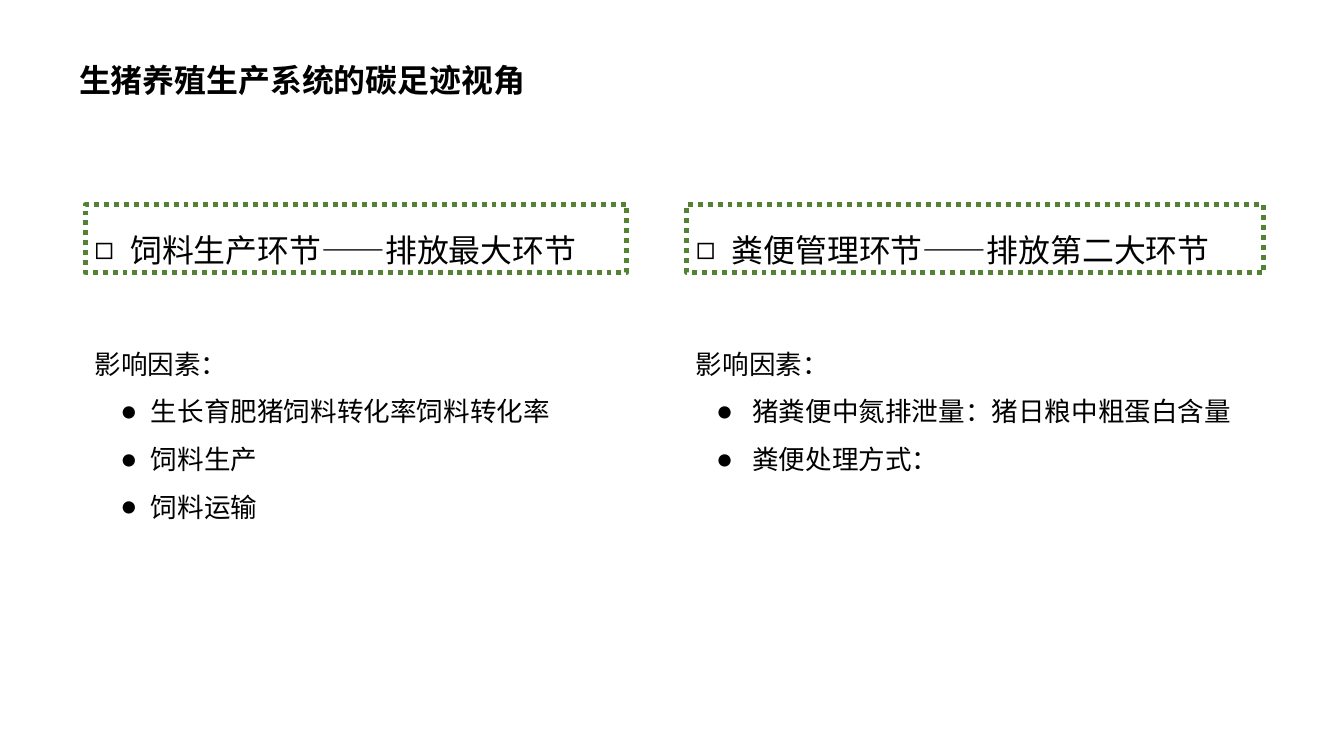
import dataclasses

import lxml.etree
import pptx
import pptx.dml.color
import pptx.enum.dml
import pptx.enum.lang
import pptx.enum.shapes
import pptx.enum.text
import pptx.oxml.ns
import pptx.util

Cm = pptx.util.Cm
Pt = pptx.util.Pt


@dataclasses.dataclass(frozen=True)
class Theme:
    """Holds the colours, fonts and type sizes of the slide."""

    ink: str = "000000"
    green: str = "548235"
    font: str = "Noto Sans CJK SC"
    latin: str = "Calibri"
    head: int = 24
    body: int = 20
    tight: float = 1.2
    loose: float = 1.8


THEME = Theme()
TITLE = "生猪养殖生产系统的碳足迹视角"
LABEL = "影响因素："
FEED = ["生长育肥猪饲料转化率饲料转化率", "饲料生产", "饲料运输"]
DUNG = ["猪粪便中氮排泄量：猪日粮中粗蛋白含量", "粪便处理方式："]


def tint(code):
    """Turn a hex code into a colour."""
    return pptx.dml.color.RGBColor.from_string(code)


def place(shape, box):
    """Move a shape to a box given in centimetres."""
    shape.left, shape.top, shape.width, shape.height = map(Cm, box)


def frame(shape):
    """Make the text wrap and start at the top of its shape."""
    text = shape.text_frame
    text.word_wrap = True
    text.auto_size = pptx.enum.text.MSO_AUTO_SIZE.NONE
    text.vertical_anchor = pptx.enum.text.MSO_ANCHOR.TOP
    text.margin_left = text.margin_right = Cm(0.25)
    text.margin_top, text.margin_bottom = Cm(0.17), Cm(0.13)
    return text


def style(para, size, lead, bold=False):
    """Set the spacing of a paragraph and the font of its runs."""
    para.alignment = pptx.enum.text.PP_ALIGN.LEFT
    para.space_before = para.space_after = Pt(0)
    para.line_spacing = Pt(size * lead)
    for run in para.runs:
        font = run.font
        font.name, font.size, font.bold = THEME.font, Pt(size), bold
        font.color.rgb = tint(THEME.ink)
        font.language_id = pptx.enum.lang.MSO_LANGUAGE_ID.SIMPLIFIED_CHINESE
        east = lxml.etree.SubElement(run._r.rPr, pptx.oxml.ns.qn("a:ea"))
        east.set("typeface", THEME.font)


def mark(para, sign="", left=0, hang=0):
    """Set the bullet sign and its indents, or no bullet at all."""
    props = para._p.get_or_add_pPr()
    props.set("marL", str(Cm(left)))
    props.set("indent", str(-Cm(hang)))
    if sign:
        face = lxml.etree.SubElement(props, pptx.oxml.ns.qn("a:buFont"))
        face.set("typeface", THEME.latin)
        dot = lxml.etree.SubElement(props, pptx.oxml.ns.qn("a:buChar"))
        dot.set("char", sign)
    else:
        lxml.etree.SubElement(props, pptx.oxml.ns.qn("a:buNone"))


def title(slide, box):
    """Fill the title placeholder."""
    shape = slide.shapes.title
    place(shape, box)
    text = frame(shape)
    text.text = TITLE
    style(text.paragraphs[0], THEME.head, THEME.tight, bold=True)


def banner(slide, box, words):
    """Draw a heading inside a dotted green frame."""
    kind = pptx.enum.shapes.MSO_SHAPE.RECTANGLE
    shape = slide.shapes.add_shape(kind, *map(Cm, box))
    shape.shadow.inherit = False
    shape.fill.background()
    shape.line.color.rgb = tint(THEME.green)
    shape.line.width = Pt(3.75)
    shape.line.dash_style = pptx.enum.dml.MSO_LINE.ROUND_DOT
    text = frame(shape)
    text.text = words
    para = text.paragraphs[0]
    style(para, THEME.head, THEME.loose)
    mark(para, "◻", 0.95, 0.95)


def points(shape, box, items, hang):
    """Fill a body placeholder with a label and its bulleted factors."""
    place(shape, box)
    text = frame(shape)
    text.text = "\n".join([LABEL, *items])
    for rank, para in enumerate(text.paragraphs):
        style(para, THEME.body, THEME.loose)
        if rank:
            mark(para, "●", 1.5, hang)
        else:
            mark(para)


def column(slide, slot, box, span, words, items, hang):
    """Place a heading with its list of factors below."""
    left, top, width, height = box
    banner(slide, (left, top, span, 1.8), words)
    body = (left, top + 3.2, width, height - 3.2)
    points(slide.placeholders[slot], body, items, hang)


def main():
    """Build the slide and save it."""
    deck = pptx.Presentation()
    deck.slide_width, deck.slide_height = Cm(35.71), Cm(20.09)
    slide = deck.slides.add_slide(deck.slide_layouts[3])
    title(slide, (1.85, 1.45, 14.6, 1.27))
    column(slide, 1, (2.26, 5.44, 14.4, 8.6), 14.4,
           "饲料生产环节——排放最大环节", FEED, 0.8)
    column(slide, 2, (18.24, 5.44, 16.74, 7.3), 15.34,
           "粪便管理环节——排放第二大环节", DUNG, 0.95)
    deck.save("out.pptx")


if __name__ == "__main__":
    main()
